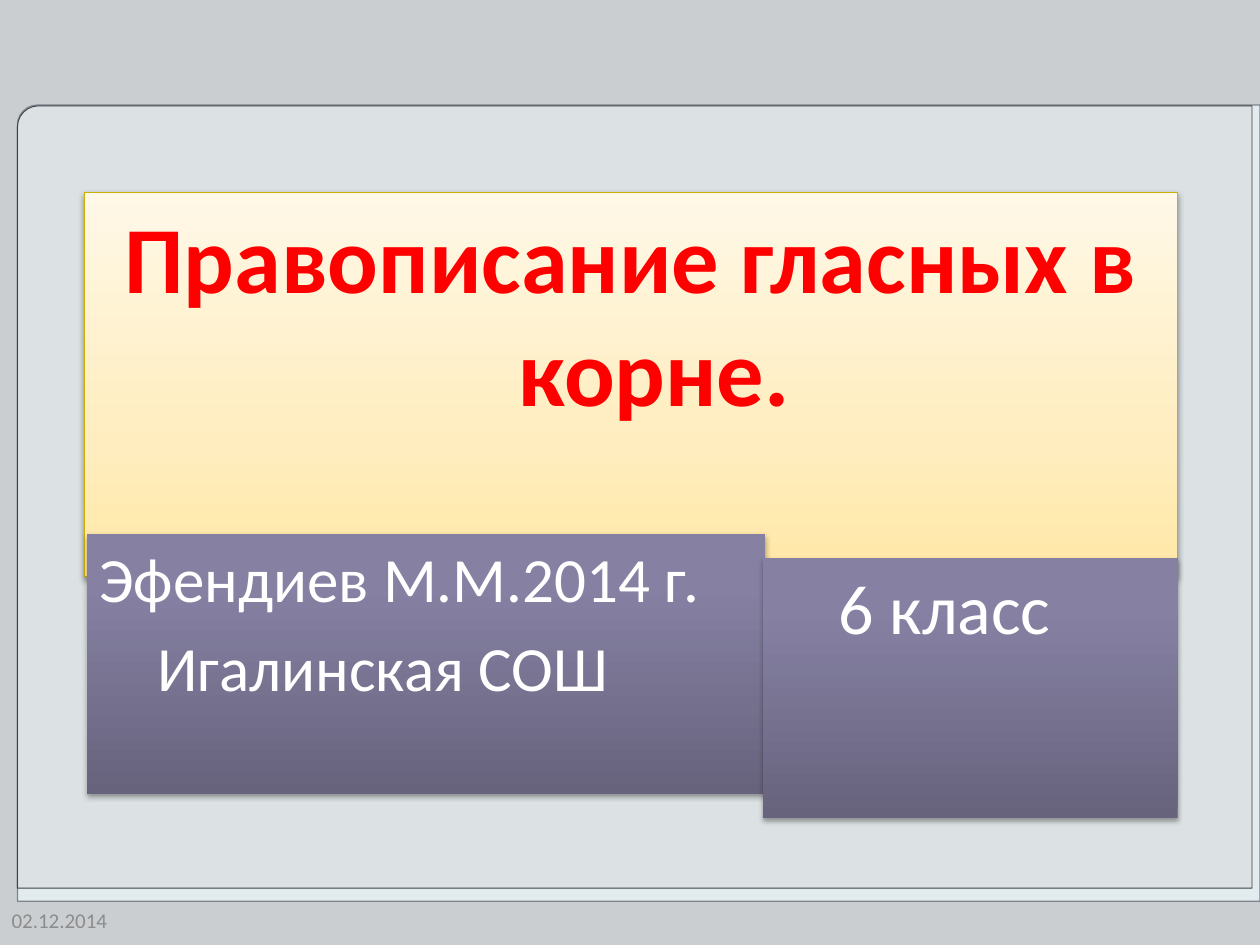
from copy import deepcopy

from lxml import etree
from pptx import Presentation
from pptx.dml.color import RGBColor
from pptx.enum.shapes import MSO_SHAPE
from pptx.enum.text import MSO_ANCHOR, MSO_AUTO_SIZE, PP_ALIGN
from pptx.oxml.ns import qn
from pptx.util import Pt

RECT, ROUND = MSO_SHAPE.RECTANGLE, MSO_SHAPE.ROUND_1_RECTANGLE
TOP, MIDDLE = MSO_ANCHOR.TOP, MSO_ANCHOR.MIDDLE
LEFT, CENTER = PP_ALIGN.LEFT, PP_ALIGN.CENTER
FIXED = MSO_AUTO_SIZE.NONE

BACK = RGBColor(0xCB, 0xCE, 0xD1)
WHITE = RGBColor(0xFF, 0xFF, 0xFF)
RED = RGBColor(0xFF, 0x00, 0x00)
GRAY = RGBColor(0x8C, 0x8C, 0x8C)
GOLD = RGBColor(0xCC, 0xAE, 0x05)
CREAM = [(0, RGBColor(0xFF, 0xE7, 0xA5)), (0.35, RGBColor(0xFF, 0xED, 0xBF)),
         (1, RGBColor(0xFF, 0xF8, 0xE7))]
PLUM = [(0, RGBColor(0x67, 0x63, 0x7D)), (0.8, RGBColor(0x86, 0x81, 0xA3)),
        (1, RGBColor(0x86, 0x81, 0xA4))]
FONT = "Calibri"

FRAMES = [
    ((10, 60, 710, 455), 0.025, RGBColor(0xE2, 0xEC, 0xEF), 100,
     RGBColor(0x7E, 0x84, 0x8D), 0.75),
    ((10, 60.5, 705.5, 447), 0.027, RGBColor(0xD8, 0xD8, 0xD8), 50,
     RGBColor(0x3F, 0x42, 0x47), 0.5),
]
HEAD = "Правописание гласных в корне."
HEAD_BOX = (48.25, 110, 624.5, 219.5)
CARDS = [
    ((49.75, 305, 387.25, 148.5), 36,
     [("Эфендиев М.М.2014 г.", 27, -27), ("Игалинская СОШ", 33, 0)]),
    ((436, 319, 237, 148.5), 40, [("6 класс", 36, 0)]),
]
DATE = "02.12.2014"
DATE_BOX = (-0.5, 511, 84, 29)


def place(shape, box):
    shape.left, shape.top, shape.width, shape.height = map(Pt, box)


def add_frame(slide, box, bend, color, alpha, edge, width):
    shape = slide.shapes.add_shape(ROUND, *map(Pt, box))
    shape.adjustments[0] = bend
    shape.shadow.inherit = False
    shape.fill.solid()
    shape.fill.fore_color.rgb = color
    shape.line.color.rgb = edge
    shape.line.width = Pt(width)
    props = shape._element.spPr
    props.find(qn("a:xfrm")).set("flipH", "1")
    tint = props.find(qn("a:solidFill"))[0]
    etree.SubElement(tint, qn("a:alpha"), val=str(alpha * 1000))


def shade(shape, stops):
    fill = shape.fill
    fill.gradient()
    fill.gradient_angle = 90
    marks = shape._element.spPr.find(qn("a:gradFill")).find(qn("a:gsLst"))
    marks.insert(1, deepcopy(marks[0]))
    for mark, (pos, color) in zip(fill.gradient_stops, stops):
        mark.position = pos
        mark.color.rgb = color


def cast(shape, alpha, dist):
    shape.shadow.inherit = False
    effects = shape._element.spPr.find(qn("a:effectLst"))
    outer = etree.SubElement(
        effects, qn("a:outerShdw"), blurRad=str(Pt(3.1)), dist=str(Pt(dist)),
        dir="5400000", rotWithShape="0")
    black = etree.SubElement(outer, qn("a:srgbClr"), val="000000")
    etree.SubElement(black, qn("a:alpha"), val=str(alpha * 1000))


def write(shape, lines, size, color, align=LEFT, anchor=TOP, bold=False, gap=0.2):
    frame = shape.text_frame
    frame.text = "\n".join(line[0] for line in lines)
    frame.word_wrap = True
    frame.auto_size = FIXED
    frame.vertical_anchor = anchor
    for para, (_, margin, indent) in zip(frame.paragraphs, lines):
        para.alignment = align
        para.space_before = Pt(size * gap)
        props = para._p.get_or_add_pPr()
        props.set("marL", str(Pt(margin)))
        props.set("indent", str(Pt(indent)))
        font = para.runs[0].font
        font.name, font.size, font.bold = FONT, Pt(size), bold
        font.color.rgb = color


def main():
    deck = Presentation()
    deck.slide_width, deck.slide_height = Pt(720), Pt(540)
    slide = deck.slides.add_slide(deck.slide_layouts[5])
    slide.background.fill.solid()
    slide.background.fill.fore_color.rgb = BACK

    for frame in FRAMES:
        add_frame(slide, *frame)

    date = slide.shapes.add_textbox(*map(Pt, DATE_BOX))
    write(date, [(DATE, 0, 0)], 12, GRAY, anchor=MIDDLE, gap=0)

    title = slide.shapes.title
    place(title, HEAD_BOX)
    shade(title, CREAM)
    title.line.color.rgb = GOLD
    title.line.width = Pt(0.75)
    cast(title, 38, 1.6)
    write(title, [(HEAD, 27, -27)], 54, RED, CENTER, bold=True)
    slide.shapes._spTree.append(title._element)

    for box, size, lines in CARDS:
        card = slide.shapes.add_shape(RECT, *map(Pt, box))
        shade(card, PLUM)
        card.line.fill.background()
        cast(card, 35, 1.8)
        write(card, lines, size, WHITE)

    deck.save("out.pptx")


if __name__ == "__main__":
    main()
